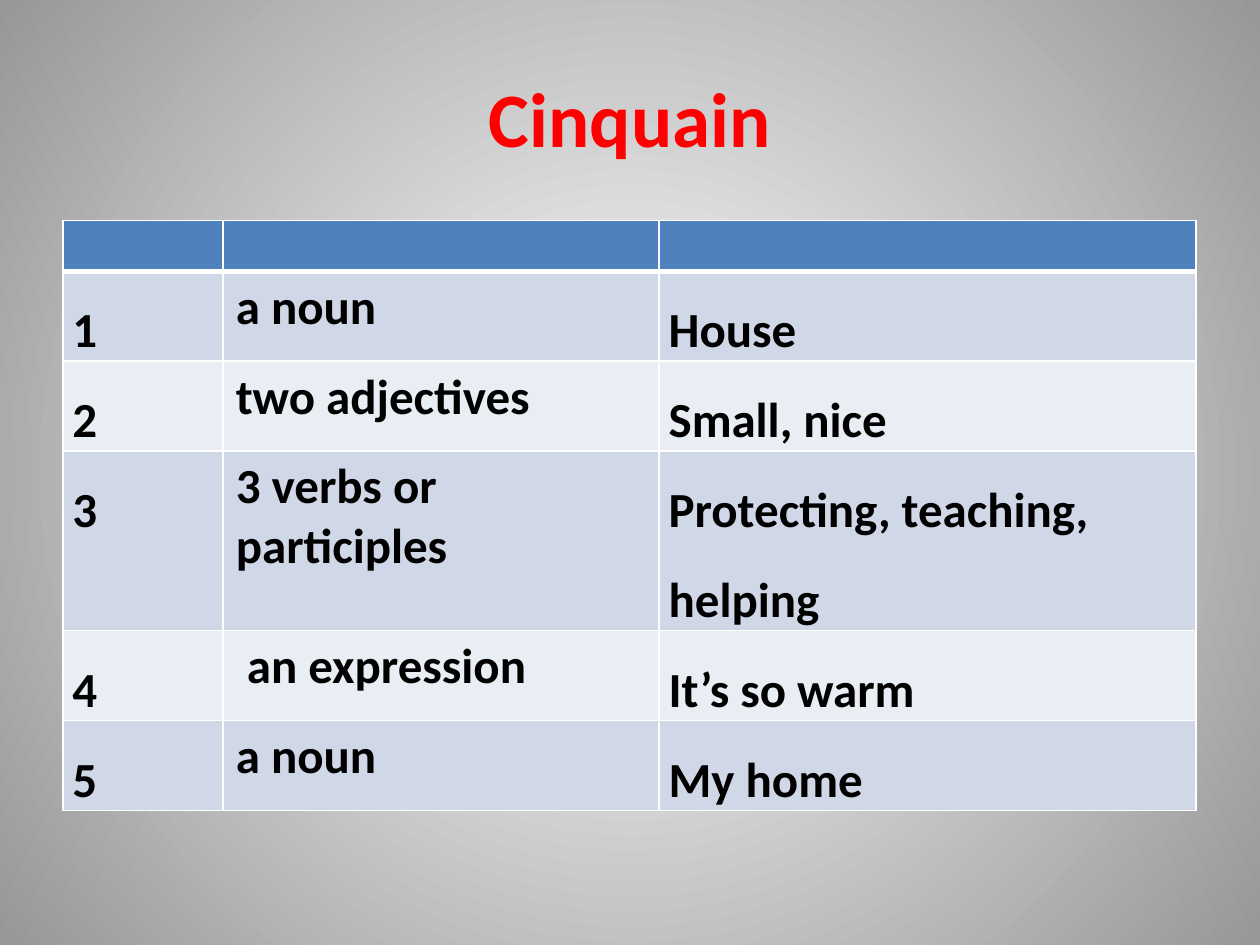
from dataclasses import dataclass

from lxml import etree
from pptx import Presentation
from pptx.dml.color import RGBColor
from pptx.enum.text import MSO_ANCHOR, PP_ALIGN
from pptx.oxml.ns import qn
from pptx.util import Cm, Pt

CENTER = PP_ALIGN.CENTER
MIDDLE = MSO_ANCHOR.MIDDLE
FONT = "Calibri"
TITLE_ONLY = 5

LEFT, WIDTH = Cm(1.27), Cm(22.86)
COLUMN_WIDTHS = (Cm(3.23), Cm(8.79), Cm(10.82))
HEADER_HEIGHT, LINE_HEIGHT = Cm(1.03), Cm(1.81)
HEADER_FILL = "4F81BD"
BAND_FILLS = ("D0D8E8", "E9EDF4")


@dataclass
class PoemLine:
    number: str
    rule: str
    example: str
    lines: int = 1


POEM = [
    PoemLine("1", "a noun", "House"),
    PoemLine("2", "two adjectives", "Small, nice"),
    PoemLine("3", "3 verbs or participles", "Protecting, teaching, helping", 2),
    PoemLine("4", " an expression", "It’s so warm"),
    PoemLine("5", "a noun", "My home"),
]


def color(value: str) -> RGBColor:
    return RGBColor.from_string(value)


def add_run(paragraph, text: str, size: int, text_color: str) -> None:
    run = paragraph.add_run()
    run.text = text
    run.font.name = FONT
    run.font.size = Pt(size)
    run.font.bold = True
    run.font.color.rgb = color(text_color)


def set_radial_background(slide, inner: str, outer: str) -> None:
    fill = slide.background.fill
    fill.gradient()
    for stop, value in zip(fill.gradient_stops, (inner, outer)):
        stop.color.rgb = color(value)
    gradient = slide.element.find(".//" + qn("a:gradFill"))
    gradient.remove(gradient.find(qn("a:lin")))
    circle = etree.SubElement(gradient, qn("a:path"), {"path": "circle"})
    center = {side: "50000" for side in "ltrb"}
    etree.SubElement(circle, qn("a:fillToRect"), center)


def style_cell(cell, fill: str, top: int = 1, bottom: int = 1) -> None:
    """Fill the cell and give it white borders, with widths in points."""
    cell.fill.solid()
    cell.fill.fore_color.rgb = color(fill)
    properties = cell._tc.get_or_add_tcPr()
    borders = {"L": 1, "R": 1, "T": top, "B": bottom}
    for index, (side, width) in enumerate(borders.items()):
        line = etree.Element(qn(f"a:ln{side}"), {"w": str(Pt(width))})
        solid = etree.SubElement(line, qn("a:solidFill"))
        etree.SubElement(solid, qn("a:srgbClr"), {"val": "FFFFFF"})
        properties.insert(index, line)


def write_cell(cell, text: str, spaced: bool) -> None:
    """Write bold text; spaced cells have 1.5 line spacing and tight margins."""
    paragraph = cell.text_frame.paragraphs[0]
    if spaced:
        cell.margin_left = cell.margin_right = Cm(0.19)
        cell.margin_top = cell.margin_bottom = 0
        paragraph.line_spacing = 1.5
    add_run(paragraph, text, 28, "000000")


def add_title(slide, text: str) -> None:
    title = slide.shapes.title
    title.left, title.top, title.width, title.height = LEFT, Cm(0.76), WIDTH, Cm(3.18)
    title.text_frame.vertical_anchor = MIDDLE
    paragraph = title.text_frame.paragraphs[0]
    paragraph.alignment = CENTER
    add_run(paragraph, text, 44, "FF0000")


def add_poem_table(slide, poem: list[PoemLine]) -> None:
    heights = [HEADER_HEIGHT] + [LINE_HEIGHT * entry.lines for entry in poem]
    table = slide.shapes.add_table(
        len(heights), len(COLUMN_WIDTHS), LEFT, Cm(4.44), WIDTH, sum(heights)
    ).table
    for column, width in zip(table.columns, COLUMN_WIDTHS):
        column.width = width
    for row, height in zip(table.rows, heights):
        row.height = height

    for cell in table.rows[0].cells:
        style_cell(cell, HEADER_FILL, bottom=3)
    for index, entry in enumerate(poem):
        cells = table.rows[index + 1].cells
        for cell, text in zip(cells, (entry.number, entry.rule, entry.example)):
            style_cell(cell, BAND_FILLS[index % 2], top=1 if index else 3)
            write_cell(cell, text, spaced=text != entry.rule)


def main() -> None:
    presentation = Presentation()
    presentation.slide_width, presentation.slide_height = Cm(25.4), Cm(19.05)
    slide = presentation.slides.add_slide(presentation.slide_layouts[TITLE_ONLY])
    set_radial_background(slide, "FFFFFF", "979797")
    add_title(slide, "Сinquain")
    add_poem_table(slide, POEM)
    presentation.save("out.pptx")


if __name__ == "__main__":
    main()
